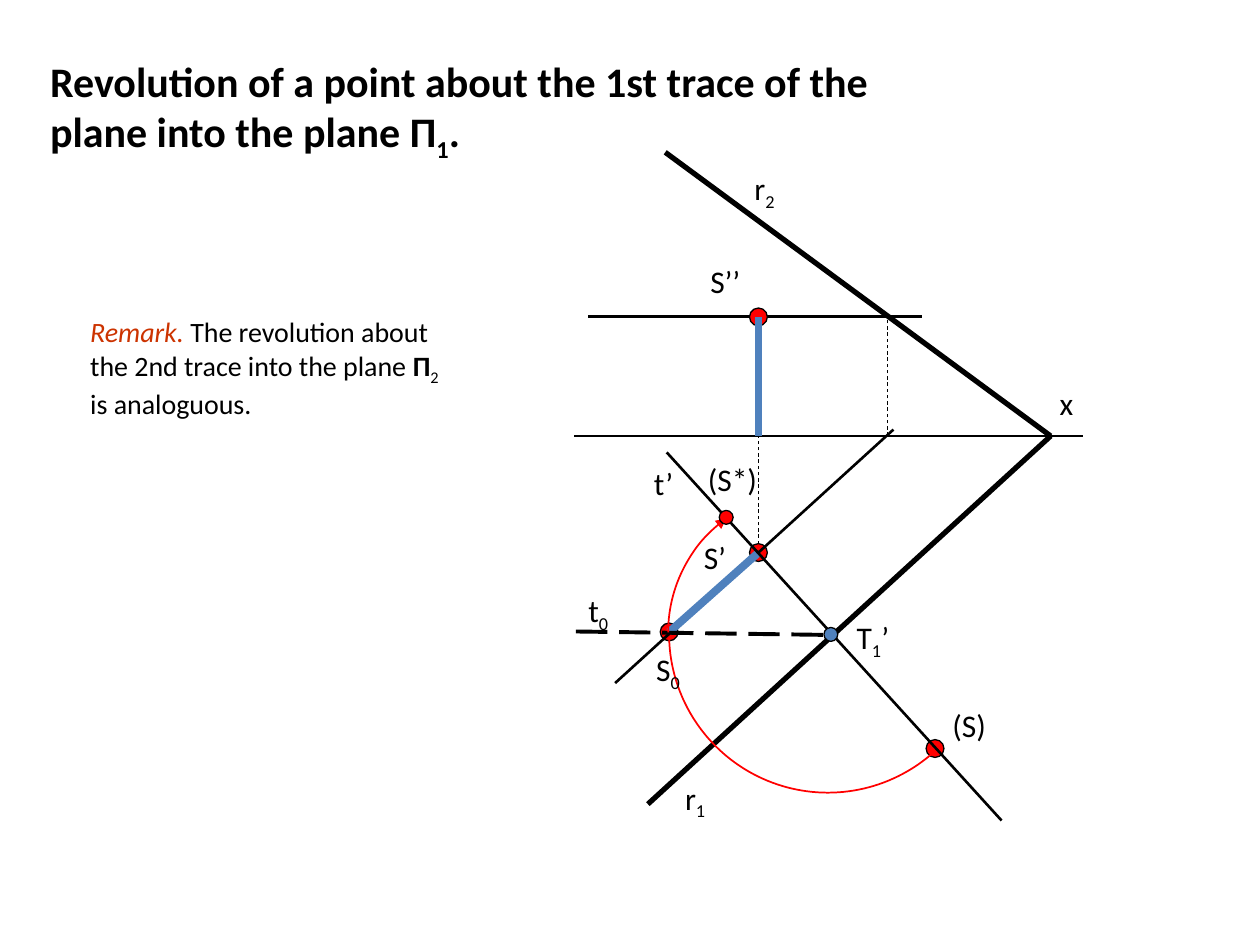
from lxml import etree
from pptx import Presentation
from pptx.dml.color import RGBColor
from pptx.enum.dml import MSO_LINE_DASH_STYLE as DASH
from pptx.enum.shapes import MSO_CONNECTOR, MSO_SHAPE
from pptx.oxml.ns import qn
from pptx.util import Cm, Pt

BLACK = RGBColor(0x00, 0x00, 0x00)
RED = RGBColor(0xFF, 0x00, 0x00)
BLUE = RGBColor(0x4F, 0x81, 0xBD)
RUST = RGBColor(0xCC, 0x33, 0x00)
FONT = "Calibri"

# Points of the construction, in cm
AXIS_Y = 8.79
VERTEX = (21.18, AXIS_Y)
S_FRONT = (15.29, 6.39)
S_TOP = (15.29, 11.14)
S_ZERO = (13.49, 12.74)
S_TURNED = (18.85, 15.09)
S_STAR = (14.64, 10.43)
TRACE_POINT = (16.75, 12.79)

# start, end, colour, width in points, dash
LINES_BELOW = [
    ((11.58, AXIS_Y), (21.84, AXIS_Y), BLACK, 0.75, None),
    ((13.41, 3.07), VERTEX, BLACK, 3, None),
    (VERTEX, (13.06, 16.21), BLACK, 3, None),
    ((17.88, AXIS_Y), (17.88, 6.35), BLACK, 0.5, DASH.DASH),
    ((11.86, 6.38), (18.59, 6.38), BLACK, 1.5, None),
]
LINES_ABOVE = [
    ((12.4, 13.77), (18.01, 8.66), BLACK, 1.5, None),
    ((15.29, 10.97), (15.29, 6.53), BLACK, 0.5, DASH.DASH),
    (S_FRONT, (15.29, AXIS_Y), BLUE, 4.5, None),
    (S_TOP, S_ZERO, BLUE, 4.5, None),
    ((13.44, 9.12), (20.19, 16.54), BLACK, 1.5, None),
    ((11.61, 12.73), (16.74, 12.8), BLACK, 2.25, DASH.LONG_DASH),
]

# centre, diameter, fill
DOTS_BELOW = [(point, 0.36, RED) for point in (S_FRONT, S_TOP, S_ZERO, S_TURNED)]
DOTS_ABOVE = [(S_STAR, 0.28, RED), (TRACE_POINT, 0.28, BLUE)]

# centre, radius, start and end angle (clockwise degrees), arrowhead
ARCS = [
    ((16.69, 12.78), 3.2, 47.6, 178, False),
    ((16.31, 12.75), 2.84, 180, 234, True),
]

# left, top, width, letter, subscript, rest
LABELS = [
    (14.96, 3.28, 1.7, "r", "2", ""),
    (13.56, 15.57, 1.27, "r", "1", ""),
    (21.11, 7.62, 0.99, "x", "", ""),
    (13.94, 10.72, 1.17, "S’", "", ""),
    (14.07, 5.16, 1.3, "S’’", "", ""),
    (12.98, 12.98, 1.27, "S", "0", ""),
    (18.95, 14.1, 1.47, "(S)", "", ""),
    (12.93, 9.22, 1.19, "t’", "", ""),
    (11.61, 11.79, 1.12, "t", "0", ""),
    (14.02, 9.14, 2.03, "(S*)", "", ""),
    (17.02, 12.34, 1.55, "T", "1", "’"),
]
LABEL_HEIGHT = 1.02

PLAIN, SUB, BOLD, BOLD_SUB, REMARK = "plain", "sub", "bold", "bold sub", "remark"
STYLES = {
    PLAIN: {},
    SUB: {},
    BOLD: {"bold": True},
    BOLD_SUB: {"bold": True},
    REMARK: {"italic": True},
}
TITLE = [
    ("Revolution of a point about the 1st trace of the plane into the plane Π", BOLD),
    ("1", BOLD_SUB),
    (".", BOLD),
]
NOTE = [
    ("Remark. ", REMARK),
    ("The revolution about the 2nd trace into the plane ", PLAIN),
    ("Π", BOLD),
    ("2", SUB),
    (" is analoguous.", PLAIN),
]


def add_text(slide, box, runs, size):
    frame = slide.shapes.add_textbox(*map(Cm, box)).text_frame
    frame.word_wrap = True
    paragraph = frame.paragraphs[0]
    for text, style in runs:
        run = paragraph.add_run()
        run.text = text
        formats = {"name": FONT, "size": Pt(size), **STYLES[style]}
        for name, value in formats.items():
            setattr(run.font, name, value)
        run.font.color.rgb = RUST if style == REMARK else BLACK
        if style in (SUB, BOLD_SUB):
            run._r.get_or_add_rPr().set("baseline", "-25000")


def add_line(slide, start, end, color, width, dash):
    connector = slide.shapes.add_connector(
        MSO_CONNECTOR.STRAIGHT, *map(Cm, start + end))
    etree.SubElement(connector._element.spPr, qn("a:effectLst"))
    connector.line.color.rgb = color
    connector.line.width = Pt(width)
    if dash is not None:
        connector.line.dash_style = dash


def add_round(slide, kind, center, radius, color, width):
    """Add an ellipse or arc given by its centre and radius."""
    x, y = center
    shape = slide.shapes.add_shape(
        kind, Cm(x - radius), Cm(y - radius), Cm(2 * radius), Cm(2 * radius))
    shape.shadow.inherit = False
    shape.line.color.rgb = color
    shape.line.width = Pt(width)
    return shape


def add_dot(slide, center, diameter, fill):
    dot = add_round(slide, MSO_SHAPE.OVAL, center, diameter / 2, BLACK, 0.75)
    dot.fill.solid()
    dot.fill.fore_color.rgb = fill


def add_arc(slide, center, radius, start, end, arrow):
    arc = add_round(slide, MSO_SHAPE.ARC, center, radius, RED, 1)
    arc.fill.background()
    for index, degrees in enumerate((start, end)):
        arc.adjustments[index] = degrees * 0.6  # 60000 units per degree / 100000
    if arrow:
        etree.SubElement(arc.line._get_or_add_ln(), qn("a:tailEnd"), type="triangle")


def main():
    presentation = Presentation()
    presentation.slide_width, presentation.slide_height = Cm(25.4), Cm(19.05)
    slide = presentation.slides.add_slide(presentation.slide_layouts[6])

    for add, items in (
        (add_line, LINES_BELOW),
        (add_dot, DOTS_BELOW),
        (add_line, LINES_ABOVE),
        (add_arc, ARCS),
        (add_dot, DOTS_ABOVE),
    ):
        for item in items:
            add(slide, *item)

    add_text(slide, (0.76, 0.99, 17.91, 2.77), TITLE, 24)
    add_text(slide, (1.57, 6.22, 7.85, 2.31), NOTE, 16)
    for left, top, width, letter, subscript, rest in LABELS:
        parts = [(letter, PLAIN), (subscript, SUB), (rest, PLAIN)]
        runs = [part for part in parts if part[0]]
        add_text(slide, (left, top, width, LABEL_HEIGHT), runs, 18)

    presentation.save("out.pptx")


if __name__ == "__main__":
    main()
